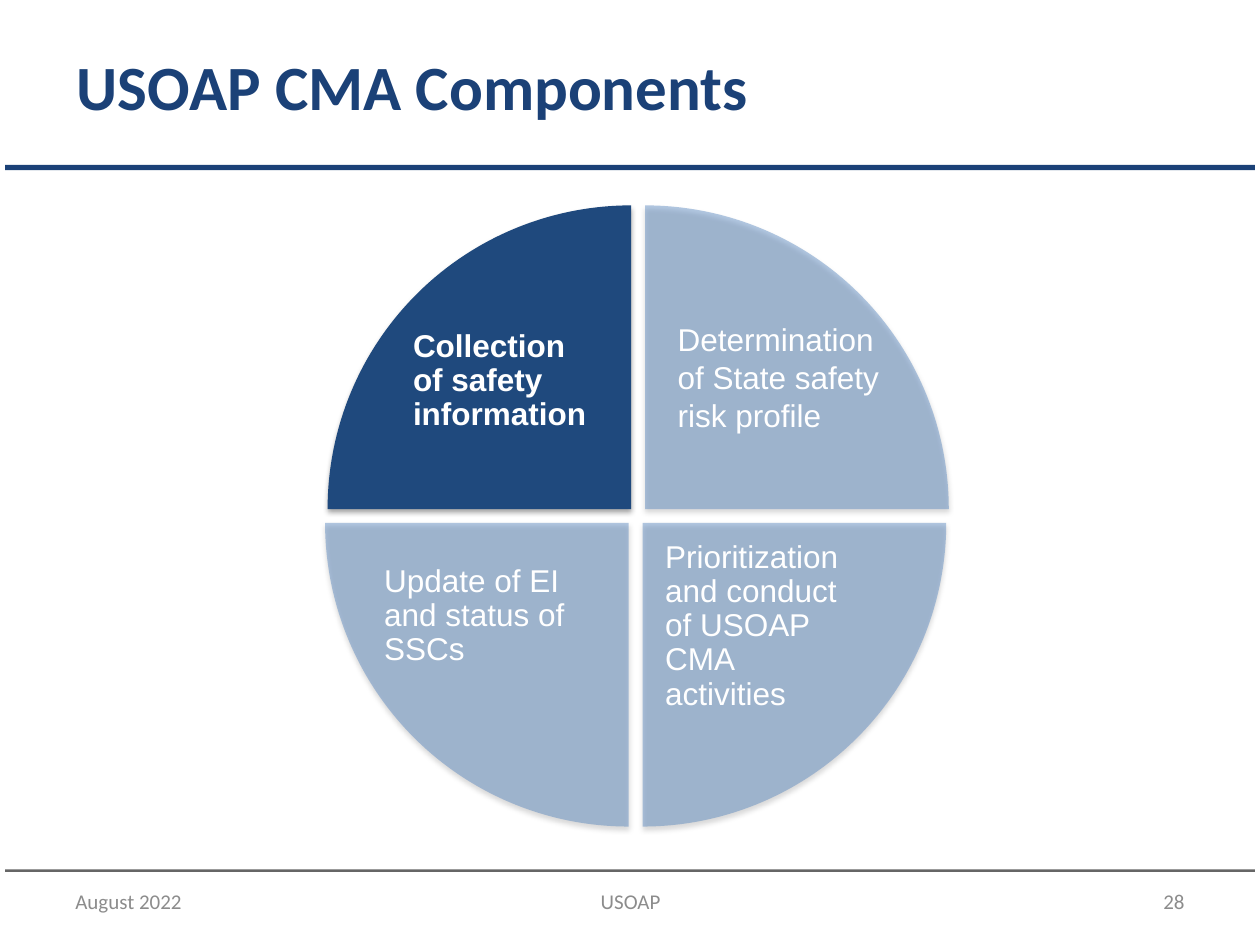
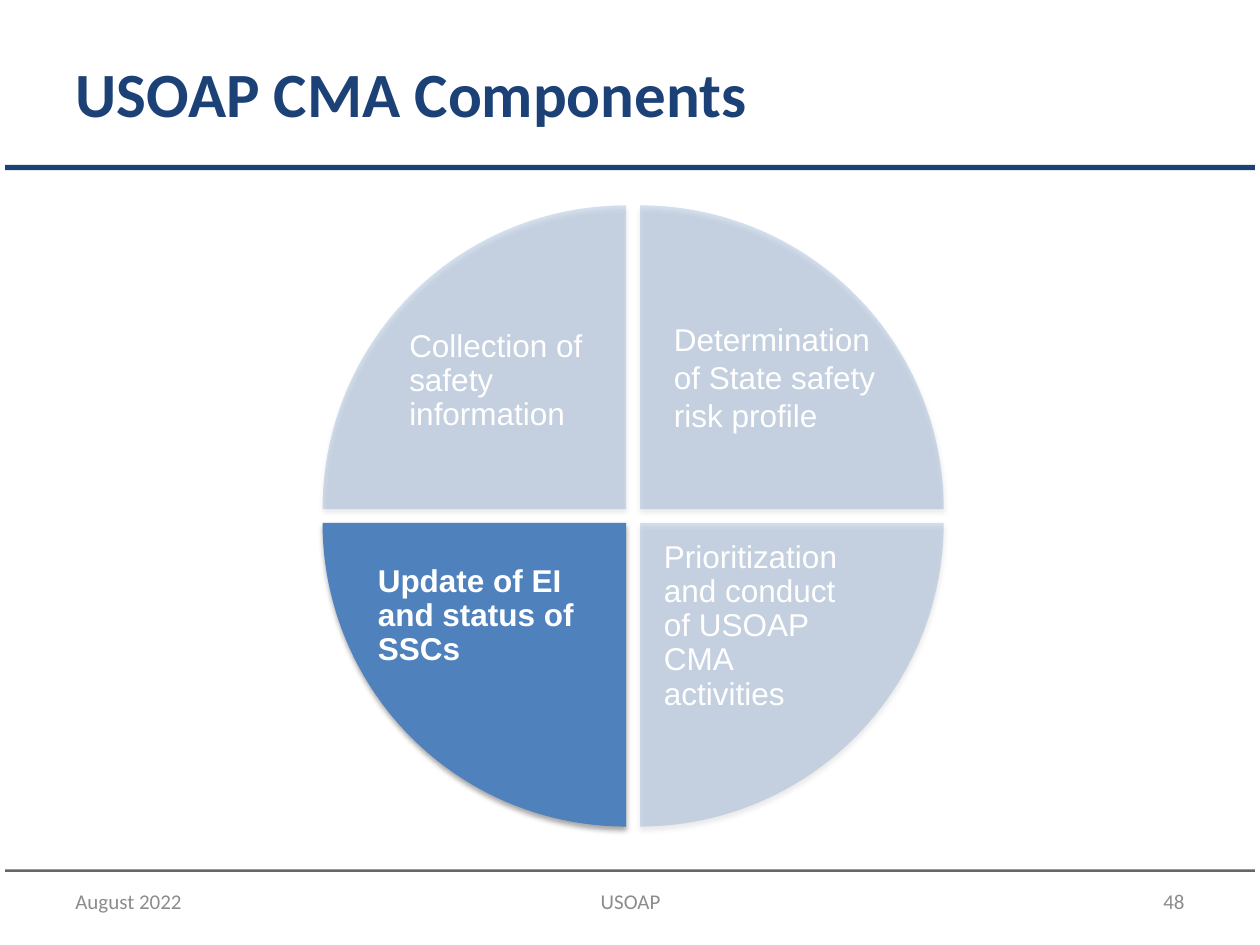
"""Build two slides that show the four USOAP CMA components as a wheel."""
from dataclasses import dataclass
from math import cos, pi, sin, tan

from lxml.etree import SubElement
from pptx import Presentation
from pptx.dml.color import RGBColor
from pptx.enum.shapes import MSO_SHAPE
from pptx.enum.text import MSO_ANCHOR, MSO_AUTO_SIZE, PP_ALIGN
from pptx.oxml.ns import qn
from pptx.util import Inches, Pt

SLIDE_WIDTH, SLIDE_HEIGHT = Inches(10), Inches(7.5)
COLUMNS = 10
CELL = SLIDE_WIDTH / COLUMNS
TITLE_ONLY = 5
RADIUS, GAP, WHEEL_TOP = 2.41, 0.11, 1.63
ARCS = 2


@dataclass(frozen=True)
class Theme:
    """Colours, fonts and type sizes of both slides."""
    navy: str = "1B4177"
    rule: str = "666666"
    footer: str = "8C8C8C"
    white: str = "FFFFFF"
    blue: str = "4F81BD"
    dark_blue: str = "1F497D"
    shadow: str = "000000"
    title_font: str = "Calibri"
    label_font: str = "Arial"
    title_size: int = 36
    label_size: int = 18
    footer_size: int = 12


@dataclass(frozen=True)
class Component:
    """A quarter of the wheel with its side, its level and its label."""
    label: str
    side: int
    level: int
    label_top: float
    label_size: tuple
    line_spacing: float = 0.9


@dataclass(frozen=True)
class WheelSlide:
    """What differs from one slide to the other."""
    number: int
    title_at: tuple
    upper_left: float
    lower_left: float
    label_lefts: tuple
    highlighted: int
    highlight: str
    faded_opacity: int


THEME = Theme()
COMPONENTS = (
    Component("Collection of safety information", -1, -1, 2.57, (1.67, 0.92)),
    Component("Determination of State safety risk profile", 1, -1, 2.49, (1.92, 1.31), 1.0),
    Component("Prioritization and conduct of USOAP CMA activities", 1, 1, 4.25, (1.75, 1.46)),
    Component("Update of EI and status of SSCs", -1, 1, 4.44, (1.92, 0.92)),
)
WHEEL_SLIDES = (
    WheelSlide(28, (0.51, 0.05), 2.6, 2.58, (3.18, 5.28, 5.18, 2.95),
               0, THEME.dark_blue, 43),
    WheelSlide(48, (0.5, 0.11), 2.56, 2.56, (3.15, 5.25, 5.17, 2.9),
               3, THEME.blue, 24),
)


def cells(*lengths):
    """Turn lengths in grid cells into slide units."""
    return [round(length * CELL) for length in lengths]


def paint(shape, color):
    """Give a shape a plain fill with neither line nor shadow."""
    shape.fill.solid()
    shape.fill.fore_color.rgb = RGBColor.from_string(color)
    shape.line.fill.background()
    shape.shadow.inherit = False


def set_opacity(color_element, percent):
    """Make a colour element partly transparent."""
    SubElement(color_element, qn("a:alpha"), val=str(percent * 1000))


def add_shadow(shape):
    """Drop a soft shadow straight below a shape."""
    effects = shape._element.spPr.find(qn("a:effectLst"))
    shadow = SubElement(effects, qn("a:outerShdw"), blurRad=str(Pt(3.1)),
                        dist=str(Pt(1.8)), dir="5400000", rotWithShape="0")
    set_opacity(SubElement(shadow, qn("a:srgbClr"), val=THEME.shadow), 35)


def write(shape, text, font_name, size, color, bold=False, align=PP_ALIGN.LEFT):
    """Write one wrapped paragraph into a shape and return it."""
    shape.text_frame.text = text
    shape.text_frame.word_wrap = True
    paragraph = shape.text_frame.paragraphs[0]
    paragraph.alignment = align
    font = paragraph.font
    font.name, font.size, font.bold = font_name, Pt(size), bold
    font.color.rgb = RGBColor.from_string(color)
    return paragraph


def add_layout_band(slide, top, height, color):
    """Draw a thin band across the slide and hand it to the shared layout."""
    margin = 0.04
    band = slide.shapes.add_shape(MSO_SHAPE.RECTANGLE,
                                  *cells(margin, top, COLUMNS - 2 * margin, height))
    paint(band, color)
    slide.slide_layout.shapes._spTree.append(band._element)


def add_title(slide, text, position):
    """Place and format the title placeholder."""
    title = slide.shapes.title
    title.left, title.top, title.width, title.height = cells(*position, 9, 1.25)
    write(title, text, THEME.title_font, THEME.title_size, THEME.navy, bold=True)
    title.text_frame.auto_size = MSO_AUTO_SIZE.NONE
    title.text_frame.vertical_anchor = MSO_ANCHOR.MIDDLE


def add_footers(slide, number):
    """Add the date, the subject and the slide number."""
    for text, left, width, align in (
            ("August 2022", 0.5, 2.33, PP_ALIGN.LEFT),
            ("USOAP", 3.42, 3.17, PP_ALIGN.CENTER),
            (str(number), 7.17, 2.33, PP_ALIGN.RIGHT)):
        box = slide.shapes.add_textbox(*cells(left, 6.95, width, 0.4))
        write(box, text, THEME.title_font, THEME.footer_size, THEME.footer, align=align)
        box.text_frame.vertical_anchor = MSO_ANCHOR.MIDDLE


def arc_curves():
    """Give the Bezier points of each part of a unit quarter circle."""
    step = pi / 2 / ARCS
    pull = 4 / 3 * tan(step / 4)
    for part in range(ARCS):
        start, end = part * step, (part + 1) * step
        yield ((cos(start) - pull * sin(start), sin(start) + pull * cos(start)),
               (cos(end) + pull * sin(end), sin(end) - pull * cos(end)),
               (cos(end), sin(end)))


def round_first_side(shape, corner, component):
    """Replace the first straight side of a triangle by a quarter circle."""
    straight = next(shape._element.iter(qn("a:lnTo")))
    for points in arc_curves():
        curve = straight.makeelement(qn("a:cubicBezTo"))
        for across, down in points:
            x, y = cells(corner[0] + component.side * RADIUS * across,
                         corner[1] + component.level * RADIUS * down)
            SubElement(curve, qn("a:pt"), x=str(x - shape.left), y=str(y - shape.top))
        straight.addprevious(curve)
    straight.getparent().remove(straight)


def add_quarter(shapes, component, wheel_left, color, opacity):
    """Draw a quarter disc beside the gaps that cross at the wheel's centre."""
    to_centre = RADIUS + GAP / 2
    corner = (wheel_left + to_centre + component.side * GAP / 2,
              WHEEL_TOP + to_centre + component.level * GAP / 2)
    builder = shapes.build_freeform(*cells(corner[0] + component.side * RADIUS, corner[1]))
    builder.add_line_segments([cells(corner[0], corner[1] + component.level * RADIUS),
                               cells(*corner)], close=True)
    quarter = builder.convert_to_shape()
    round_first_side(quarter, corner, component)
    paint(quarter, color)
    if opacity < 100:
        set_opacity(quarter._element.spPr.find(qn("a:solidFill"))[0], opacity)
    add_shadow(quarter)


def add_label(shapes, component, left, bold):
    """Write a component's name over its quarter."""
    box = shapes.add_textbox(*cells(left, component.label_top, *component.label_size))
    paragraph = write(box, component.label, THEME.label_font, THEME.label_size,
                      THEME.white, bold)
    if component.line_spacing != 1:
        paragraph.line_spacing = component.line_spacing
    box.text_frame.auto_size = MSO_AUTO_SIZE.SHAPE_TO_FIT_TEXT


def add_wheel(slide, content):
    """Draw the four quarters with one highlighted, then their labels."""
    shapes = slide.shapes.add_group_shape().shapes
    lefts = {-1: content.upper_left, 1: content.lower_left}
    for index, component in enumerate(COMPONENTS):
        color, opacity = ((content.highlight, 100) if index == content.highlighted
                          else (THEME.blue, content.faded_opacity))
        add_quarter(shapes, component, lefts[component.level], color, opacity)
    for index, (component, left) in enumerate(zip(COMPONENTS, content.label_lefts)):
        add_label(shapes, component, left, index == content.highlighted)


def main():
    """Build and save the presentation."""
    presentation = Presentation()
    presentation.slide_width, presentation.slide_height = SLIDE_WIDTH, SLIDE_HEIGHT
    layout = presentation.slide_layouts[TITLE_ONLY]
    for content in WHEEL_SLIDES:
        slide = presentation.slides.add_slide(layout)
        add_title(slide, "USOAP CMA Components", content.title_at)
        add_wheel(slide, content)
        add_footers(slide, content.number)
    add_layout_band(slide, 6.9, 0.02, THEME.rule)
    add_layout_band(slide, 1.31, 0.04, THEME.navy)
    presentation.save("out.pptx")


if __name__ == "__main__":
    main()
